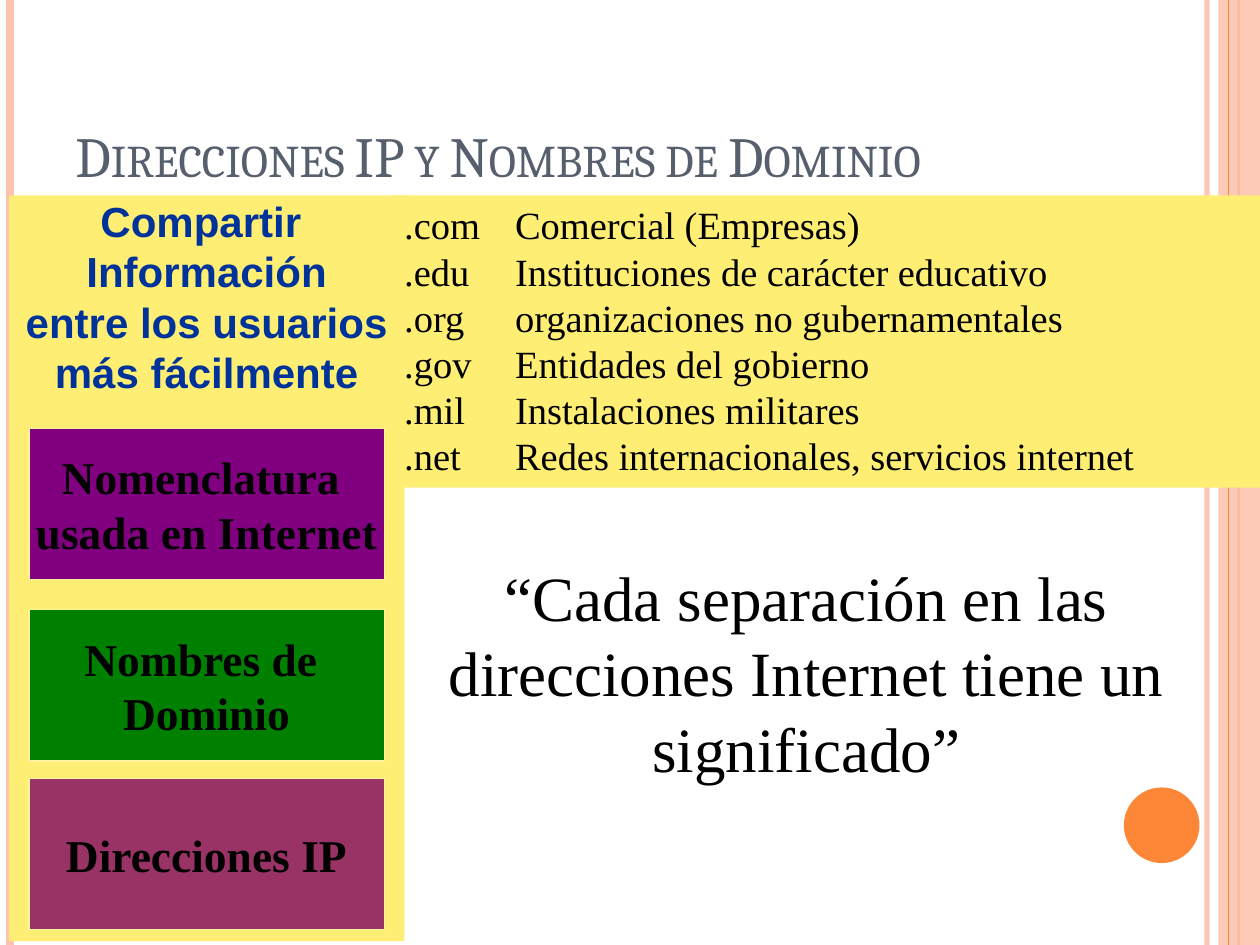
from dataclasses import dataclass

from lxml import etree
from pptx import Presentation
from pptx.dml.color import RGBColor
from pptx.enum.shapes import MSO_CONNECTOR, MSO_SHAPE
from pptx.enum.text import MSO_ANCHOR, PP_ALIGN
from pptx.oxml.ns import qn
from pptx.util import Inches, Pt


@dataclass(frozen=True)
class Theme:
    orange: str = "FE8637"
    peach: str = "FEC3AE"
    yellow: str = "FFEE74"
    border: str = "FFF39D"
    purple: str = "800080"
    green: str = "008000"
    plum: str = "993366"
    slate: str = "575F6D"
    navy: str = "003399"
    ink: str = "000000"
    serif: str = "Times New Roman"
    sans: str = "Arial"
    heading: str = "Cambria"
    title_size: float = 32.4
    quote_size: float = 36
    card_size: float = 26
    purpose_size: float = 24
    domain_size: float = 22
    leading: float = 1.2


THEME = Theme()


def set_alpha(element, percent):
    color = element.find(".//" + qn("a:srgbClr"))
    etree.SubElement(color, qn("a:alpha")).set("val", str(percent * 1000))


def add_block(slide, kind, box, fill, border=None):
    block = slide.shapes.add_shape(kind, *map(Inches, box))
    block.shadow.inherit = False
    block.fill.solid()
    block.fill.fore_color.rgb = RGBColor.from_string(fill)
    if border:
        block.line.color.rgb = RGBColor.from_string(border)
        block.line.width = Pt(0.75)
    else:
        block.line.fill.background()
    return block


def add_rule(slide, x, top, height, color, width, opacity=100):
    rule = slide.shapes.add_connector(
        MSO_CONNECTOR.STRAIGHT, Inches(x), Inches(top), Inches(x), Inches(top + height)
    )
    rule.line.color.rgb = RGBColor.from_string(color)
    rule.line.width = Pt(width)
    if opacity < 100:
        set_alpha(rule.line._get_or_add_ln(), opacity)
    etree.SubElement(rule._element.spPr, qn("a:effectLst"))


def write(holder, lines, size, font, color, align=PP_ALIGN.CENTER,
          anchor=MSO_ANCHOR.TOP, bold=False, wrap=True):
    frame = holder.text_frame
    frame.text = "\n".join(lines)
    frame.word_wrap = wrap
    frame.vertical_anchor = anchor
    for paragraph in frame.paragraphs:
        paragraph.alignment = align
        paragraph.line_spacing = Pt(size * THEME.leading)
        for run in paragraph.runs:
            run.font.size = Pt(size)
            run.font.name = font
            run.font.bold = bold
            run.font.color.rgb = RGBColor.from_string(color)
    return frame


def add_frame(slide, box):
    left, top, width, height = box
    right = left + width
    add_rule(slide, right - 0.42, top, height, THEME.peach, 3, 93)
    add_rule(slide, left + 0.08, top, height, THEME.peach, 4.5)
    add_rule(slide, right - 0.17, top, height, THEME.orange, 1.5)
    band = add_block(slide, MSO_SHAPE.RECTANGLE, (right - 0.33, top, 0.33, height), THEME.peach)
    set_alpha(band._element.spPr, 87)
    add_rule(slide, right - 0.25, top, height, THEME.orange, 0.75)
    add_block(slide, MSO_SHAPE.OVAL, (right - 1.08, top + 6.25, 0.6, 0.6), THEME.orange)


def add_title(slide, box):
    title = slide.shapes.add_textbox(*map(Inches, box))
    frame = write(title, ["Direcciones IP y Nombres de Dominio"], THEME.title_size,
                  THEME.heading, THEME.slate, PP_ALIGN.LEFT, MSO_ANCHOR.BOTTOM)
    heading = frame.paragraphs[0]
    heading.line_spacing = 1.0
    heading.runs[0].font._element.set("cap", "small")


def add_quote(slide, box):
    quote = slide.shapes.add_textbox(*map(Inches, box))
    write(quote, ["“Cada separación en las direcciones Internet tiene un significado”"],
          THEME.quote_size, THEME.serif, THEME.ink)


def add_sidebar(slide, box):
    left, top, width, height = box
    purpose = add_block(slide, MSO_SHAPE.RECTANGLE, box, THEME.yellow)
    frame = write(purpose, ["Compartir ", "Información", "entre los usuarios", "más fácilmente"],
                  THEME.purpose_size, THEME.sans, THEME.navy, bold=True, wrap=False)
    frame.margin_top = 0
    cards = [
        (1.85, THEME.purple, ["Nomenclatura ", "usada en Internet"]),
        (3.29, THEME.green, ["Nombres de ", "Dominio"]),
        (4.63, THEME.plum, ["Direcciones IP"]),
    ]
    for offset, fill, lines in cards:
        card = add_block(slide, MSO_SHAPE.RECTANGLE,
                         (left + 0.16, top + offset, width - 0.32, 1.2), fill, THEME.border)
        write(card, lines, THEME.card_size, THEME.serif, THEME.ink,
              anchor=MSO_ANCHOR.MIDDLE, bold=True, wrap=False)


def add_domains(slide, box):
    domains = [
        (".com", "Comercial (Empresas)"),
        (".edu", "Instituciones de carácter educativo"),
        (".org", "organizaciones no gubernamentales"),
        (".gov", "Entidades del gobierno"),
        (".mil", "Instalaciones militares"),
        (".net", "Redes internacionales, servicios internet"),
    ]
    panel = add_block(slide, MSO_SHAPE.RECTANGLE, box, THEME.yellow)
    frame = write(panel, ["\t".join(domain) for domain in domains], THEME.domain_size,
                  THEME.serif, THEME.ink, PP_ALIGN.LEFT)
    for paragraph in frame.paragraphs:
        properties = paragraph._p.get_or_add_pPr()
        properties.set("marL", str(Inches(0.38)))
        properties.set("indent", str(Inches(-0.38)))


def main():
    presentation = Presentation()
    presentation.slide_width = Inches(10)
    presentation.slide_height = Inches(7.5)
    slide = presentation.slides.add_slide(presentation.slide_layouts[6])
    add_frame(slide, (0, 0, 10, 7.5))
    add_quote(slide, (3.11, 4.38, 6.58, 1.9))
    add_sidebar(slide, (0.07, 1.55, 3.14, 5.92))
    add_domains(slide, (3.11, 1.55, 6.89, 2.32))
    add_title(slide, (0.5, 0.3, 8.17, 1.25))
    presentation.save("out.pptx")


if __name__ == "__main__":
    main()
